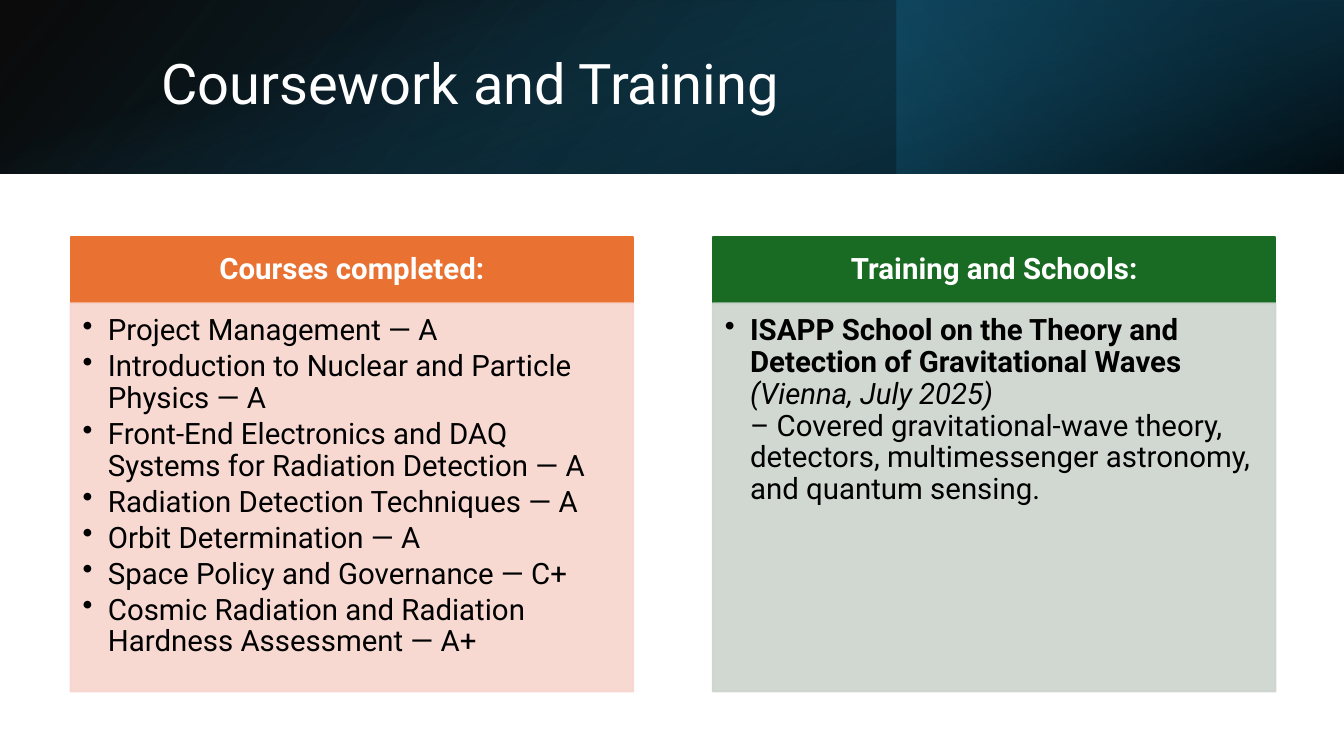
"""Build a slide listing coursework and training in two headed panels."""
import pptx
import pptx.util
import pptx.oxml
import pptx.oxml.ns
import pptx.dml.color
import pptx.enum.shapes
import pptx.enum.text
from dataclasses import dataclass

Inches = pptx.util.Inches
Pt = pptx.util.Pt
qn = pptx.oxml.ns.qn
RGB = pptx.dml.color.RGBColor.from_string
ALIGN = pptx.enum.text.PP_ALIGN
ANCHOR = pptx.enum.text.MSO_ANCHOR


@dataclass
class Theme:
    font: str = "Roboto"
    head: int = 40
    body: int = 21
    white: str = "FFFFFF"
    black: str = "000000"
    teal: str = "156082"
    deep: str = "104862"
    navy: str = "0B3041"
    orange: str = "E97132"
    pink: str = "F7D5CE"
    green: str = "196B24"
    sage: str = "CCD4CD"


theme = Theme()


def add_box(left, top, width, height):
    """Add a rectangle without a shadow."""
    box = slide.shapes.add_shape(
        pptx.enum.shapes.MSO_SHAPE.RECTANGLE,
        Inches(left), Inches(top), Inches(width), Inches(height))
    box.shadow.inherit = False
    return box


def add_run(para, text, size, color, bold=False, italic=False):
    """Add one styled run to a paragraph."""
    run = para.add_run()
    run.text = text
    font = run.font
    font.name, font.size = theme.font, Pt(size)
    font.bold, font.italic = bold, italic
    font.color.rgb = RGB(color)


deck = pptx.Presentation()
deck.slide_width, deck.slide_height = Inches(13.33), Inches(7.5)
slide = deck.slides.add_slide(deck.slide_layouts[5])

bands = [
    ((0, 0, 13.33, 1.72), 0, True, 140,
     [(0, theme.black, 96), (100, theme.deep, 100)]),
    ((8.89, 0, 4.44, 1.72), 180, False, 320,
     [(19, theme.navy, 68), (100, theme.teal, 79)]),
    ((5.8, -5.8, 1.72, 13.33), 90, False, 340,
     [(23, theme.teal, 0), (99, theme.black, 74)]),
]
for place, turn, flip, angle, stops in bands:
    band = add_box(*place)
    band.rotation = turn
    band.line.fill.background()
    band.fill.gradient()
    band.fill.gradient_angle = 0
    if flip:
        band._element.spPr.find(qn("a:xfrm")).set("flipH", "1")
    grad = band._element.spPr.find(qn("a:gradFill"))
    grad.find(qn("a:lin")).set("ang", str(angle * 60000))
    for stop, (pos, color, alpha) in zip(band.fill.gradient_stops, stops):
        stop.position = pos / 100
        stop.color.rgb = RGB(color)
    for tint, (pos, color, alpha) in zip(grad.iter(qn("a:srgbClr")), stops):
        tint.append(pptx.oxml.parse_xml(
            f'<a:alpha {pptx.oxml.ns.nsdecls("a")} val="{alpha * 1000}"/>'))

title = slide.shapes.title
slide.shapes._spTree.append(title._element)
title.left, title.top = Inches(1.5), Inches(0.38)
title.width, title.height = Inches(10.98), Inches(0.96)
title.text_frame.vertical_anchor = ANCHOR.MIDDLE
para = title.text_frame.paragraphs[0]
para.alignment = ALIGN.LEFT
para.line_spacing = 0.9
add_run(para, "Coursework and Training", theme.head, theme.white)

courses = [
    "Project Management — A",
    "Introduction to Nuclear and Particle Physics — A",
    "Front-End Electronics and DAQ Systems for Radiation Detection — A",
    "Radiation Detection Techniques — A",
    "Orbit Determination — A",
    "Space Policy and Governance — C+",
    "Cosmic Radiation and Radiation Hardness Assessment — A+",
]
school = [
    ("ISAPP School on the Theory and Detection of Gravitational Waves", True, False),
    ("(Vienna, July 2025)", False, True),
    ("– Covered gravitational-wave theory, detectors, multimessenger "
     "astronomy, and quantum sensing.", False, False),
]
panels = [
    (0.7, "Courses completed:", theme.orange, theme.pink,
     [[(name, False, False)] for name in courses]),
    (7.07, "Training and Schools:", theme.green, theme.sage, [school]),
]
for left, label, strong, pale, items in panels:
    head = add_box(left, 2.35, 5.58, 0.66)
    body = add_box(left, 3.01, 5.58, 3.85)
    for box, color in ((head, strong), (body, pale)):
        box.fill.solid()
        box.fill.fore_color.rgb = RGB(color)
        box.line.color.rgb = RGB(color)
        box.line.width = Pt(1.5)
        box.text_frame.word_wrap = True
    for tint in body._element.spPr.iter(qn("a:srgbClr")):
        tint.append(pptx.oxml.parse_xml(
            f'<a:alpha {pptx.oxml.ns.nsdecls("a")} val="90000"/>'))

    head.text_frame.vertical_anchor = ANCHOR.MIDDLE
    para = head.text_frame.paragraphs[0]
    para.alignment = ALIGN.CENTER
    para.line_spacing = 0.9
    add_run(para, label, theme.body, theme.white, bold=True)

    frame = body.text_frame
    frame.vertical_anchor = ANCHOR.TOP
    frame.margin_left = frame.margin_top = Inches(0.12)
    frame.margin_right, frame.margin_bottom = Inches(0.16), Inches(0.18)
    for row, item in enumerate(items):
        para = frame.add_paragraph() if row else frame.paragraphs[0]
        para.alignment = ALIGN.LEFT
        para.level = 1
        para.line_spacing = 0.9
        para.space_after = Pt(3)
        props = para._p.get_or_add_pPr()
        props.set("marL", str(Inches(0.25)))
        props.set("indent", str(Inches(-0.25)))
        props.append(pptx.oxml.parse_xml(
            f'<a:buChar {pptx.oxml.ns.nsdecls("a")} char="•"/>'))
        for part, (text, bold, italic) in enumerate(item):
            if part:
                para.add_line_break()
            add_run(para, text, theme.body, theme.black, bold, italic)

deck.save("out.pptx")
